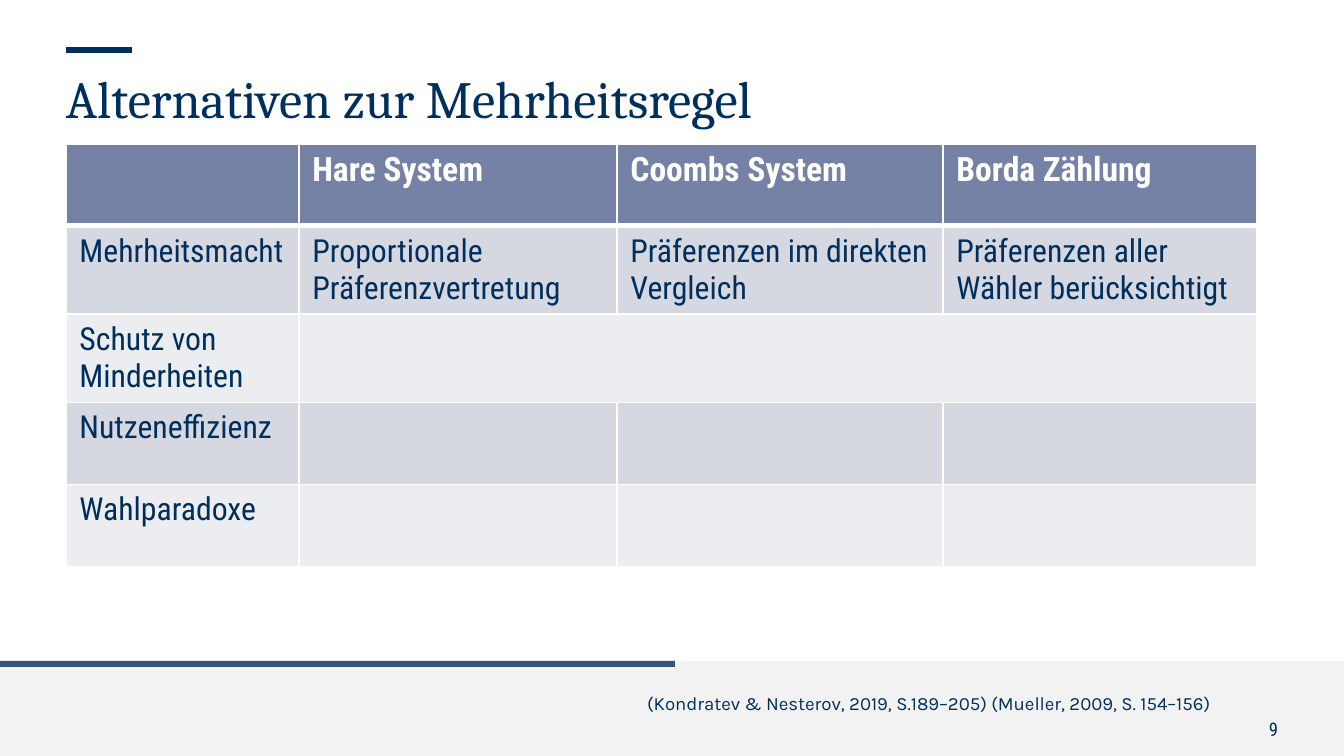
from dataclasses import dataclass

from lxml.etree import SubElement
from pptx import Presentation
from pptx.dml.color import RGBColor
from pptx.enum.shapes import MSO_CONNECTOR, MSO_SHAPE
from pptx.enum.text import MSO_ANCHOR, PP_ALIGN
from pptx.oxml.ns import qn
from pptx.util import Emu, Pt

EMU_PER_PX = 9144000 / 1344


@dataclass(frozen=True)
class Theme:
    navy: str = "002F5D"
    white: str = "FFFFFF"
    band: str = "F2F2F2"
    header: str = "7682A5"
    odd: str = "D6D8E1"
    even: str = "ECEDF0"
    serif: str = "Cambria"
    condensed: str = "Roboto Condensed"
    sans: str = "Karla"
    title: int = 28
    head: int = 18
    body: int = 17
    small: int = 10


def px(n):
    return Emu(round(n * EMU_PER_PX))


def rgb(color):
    return RGBColor.from_string(color)


def write(tf, text, font, size, color, bold=False, align=PP_ALIGN.LEFT):
    p = tf.paragraphs[0]
    p.alignment = align
    p.space_before = Pt(0)
    p.font.size = Pt(size)
    if text:
        r = p.add_run()
        r.text = text
        r.font.name = font
        r.font.size = Pt(size)
        r.font.bold = bold
        r.font.color.rgb = rgb(color)


class Deck:
    def __init__(self, theme):
        self.theme = theme
        self.prs = Presentation()
        self.prs.slide_width, self.prs.slide_height = px(1344), px(756)
        self.s = self.prs.slides.add_slide(self.prs.slide_layouts[5])

    def frame(self, tf):
        tf.word_wrap = True
        tf.vertical_anchor = MSO_ANCHOR.TOP
        tf.margin_left = tf.margin_top = tf.margin_right = tf.margin_bottom = 0
        return tf

    def title(self, text, x, y, w, h):
        sp = self.s.shapes.title
        sp.left, sp.top, sp.width, sp.height = map(px, (x, y, w, h))
        write(self.frame(sp.text_frame), text, self.theme.serif, self.theme.title, self.theme.navy)

    def text(self, text, x, y, w, h, **style):
        sp = self.s.shapes.add_textbox(*map(px, (x, y, w, h)))
        write(self.frame(sp.text_frame), text, **style)

    def rect(self, x, y, w, h, color, opacity=100):
        sp = self.s.shapes.add_shape(MSO_SHAPE.RECTANGLE, *map(px, (x, y, w, h)))
        sp.shadow.inherit = False
        sp.line.fill.background()
        sp.fill.solid()
        sp.fill.fore_color.rgb = rgb(color)
        if opacity < 100:
            clr = sp.fill._xPr.find(qn("a:solidFill"))[0]
            SubElement(clr, qn("a:alpha"), val=str(opacity * 1000))

    def line(self, x1, y1, x2, y2, color, width):
        c = self.s.shapes.add_connector(MSO_CONNECTOR.STRAIGHT, *map(px, (x1, y1, x2, y2)))
        c.line.color.rgb = rgb(color)
        c.line.width = Pt(width)
        SubElement(c._element.spPr, qn("a:effectLst"))

    def borders(self, cell, bottom):
        tc_pr = cell._tc.get_or_add_tcPr()
        for side, width in (("L", 1), ("R", 1), ("T", 1), ("B", bottom)):
            ln = SubElement(tc_pr, qn(f"a:ln{side}"), w=str(Pt(width)))
            fill = SubElement(ln, qn("a:solidFill"))
            SubElement(fill, qn("a:srgbClr"), val=self.theme.white)

    def table(self, rows, x, y, widths, heights):
        t = self.theme
        size = (sum(widths), sum(heights))
        tbl = self.s.shapes.add_table(len(rows), len(widths), *map(px, (x, y, *size))).table
        tbl.horz_banding = False
        for col, w in zip(tbl.columns, widths):
            col.width = px(w)
        for row, h in zip(tbl.rows, heights):
            row.height = px(h)
        for i, texts in enumerate(rows):
            is_head = i == 0
            color = t.header if is_head else (t.odd if i % 2 else t.even)
            for j, text in enumerate(texts):
                cell = tbl.cell(i, j)
                self.borders(cell, 3 if is_head else 1)
                cell.fill.solid()
                cell.fill.fore_color.rgb = rgb(color)
                write(cell.text_frame, text, t.condensed, t.head if is_head else t.body,
                      t.white if is_head else t.navy, bold=is_head)
        return tbl


def main():
    t = Theme()
    deck = Deck(t)
    deck.rect(0, 661, 1344, 95, t.band)
    deck.rect(0, 661, 675, 6, t.navy, opacity=80)
    deck.line(66, 50, 132, 50, t.navy, 3.5)
    deck.title("Alternativen zur Mehrheitsregel", 66, 66, 1236, 121)

    rows = [
        ["", "Hare System", "Coombs System", "Borda Zählung"],
        ["Mehrheitsmacht", "Proportionale Präferenzvertretung",
         "Präferenzen im direkten Vergleich", "Präferenzen aller Wähler berücksichtigt"],
        ["Schutz von Minderheiten", "", "", ""],
        ["Nutzeneffizienz", "", "", ""],
        ["Wahlparadoxe", "", "", ""],
    ]
    tbl = deck.table(rows, 66, 144, [233, 318, 326, 314], [82, 88, 88, 82, 82])
    tbl.cell(2, 1).merge(tbl.cell(2, 3))

    small = dict(size=t.small, color=t.navy, align=PP_ALIGN.RIGHT)
    deck.text("(Kondratev & Nesterov, 2019, S.189–205) (Mueller, 2009, S. 154–156)",
              441, 692, 769, 24, font=t.sans, **small)
    deck.text("9", 1211, 718, 67, 23, font=t.condensed, **small)
    deck.prs.save("out.pptx")


if __name__ == "__main__":
    main()
